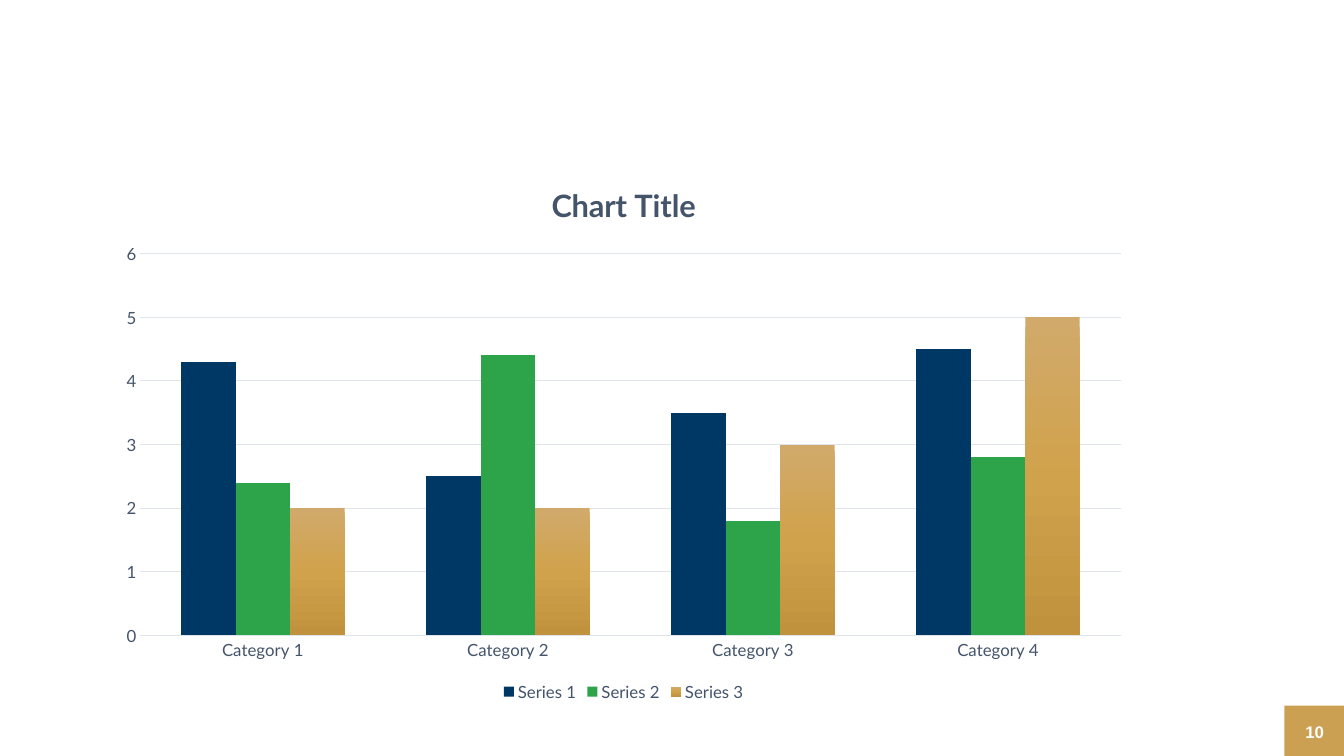
from copy import deepcopy

from pptx import Presentation
from pptx.chart.data import CategoryChartData
from pptx.dml.color import RGBColor
from pptx.enum.chart import XL_CHART_TYPE, XL_LEGEND_POSITION, XL_TICK_MARK
from pptx.enum.shapes import MSO_SHAPE
from pptx.enum.text import MSO_ANCHOR, PP_ALIGN
from pptx.util import Inches, Pt

# Content
TITLE = "Chart Title"
PAGE = "10"
CATEGORIES = ["Category 1", "Category 2", "Category 3", "Category 4"]
SERIES = [
    ("Series 1", (4.3, 2.5, 3.5, 4.5), ["navy"]),
    ("Series 2", (2.4, 4.4, 1.8, 2.8), ["green"]),
    ("Series 3", (2, 2, 3, 5), ["gold_light", "gold_mid", "gold_dark"]),
]
COLORS = {
    "navy": "003865", "green": "2DA44A", "gold_light": "D1AA6B",
    "gold_mid": "D1A24C", "gold_dark": "C1923D", "tab": "CBA052",
    "text": "44546A", "grid": "E0E5EB", "white": "FFFFFF",
}
WIDTH, HEIGHT = 13.33, 7.5
CHART_BOX = (1.05, 1.6, 10.27, 5.4)
TAB_BOX = (12.74, 7, 0.6, 0.52)


def rgb(name):
    return RGBColor.from_string(COLORS[name])


def set_font(font, size, color, name="Lato", bold=False):
    font.name, font.size, font.bold = name, Pt(size), bold
    font.color.rgb = rgb(color)


def set_line(line):
    line.color.rgb = rgb("grid")
    line.width = Pt(0.75)


def fill_series(series, names):
    fill = series.format.fill
    if len(names) == 1:
        fill.solid()
        fill.fore_color.rgb = rgb(names[0])
        return
    fill.gradient()
    fill.gradient_angle = 270
    stops = series._element.xpath(".//a:gsLst")[0]
    while len(stops) < len(names):
        stops.append(deepcopy(stops[0]))
    for i, (stop, name) in enumerate(zip(fill.gradient_stops, names)):
        stop.position = i / (len(names) - 1)
        stop.color.rgb = rgb(name)


prs = Presentation()
prs.slide_width, prs.slide_height = Inches(WIDTH), Inches(HEIGHT)
s = prs.slides.add_slide(prs.slide_layouts[6])

# Page number tab
tab = s.shapes.add_shape(MSO_SHAPE.RECTANGLE, *map(Inches, TAB_BOX))
tab.shadow.inherit = False
tab.fill.solid()
tab.fill.fore_color.rgb = rgb("tab")
tab.line.fill.background()
tf = tab.text_frame
tf.vertical_anchor = MSO_ANCHOR.MIDDLE
p = tf.paragraphs[0]
p.text = PAGE
p.alignment = PP_ALIGN.CENTER
set_font(p.font, 12, "white", "Arial", True)

# Column chart
data = CategoryChartData()
data.categories = CATEGORIES
for name, values, _ in SERIES:
    data.add_series(name, values)
chart = s.shapes.add_chart(
    XL_CHART_TYPE.COLUMN_CLUSTERED, *map(Inches, CHART_BOX), data).chart
set_font(chart.font, 12, "text")

plot = chart.plots[0]
plot.gap_width, plot.overlap = 150, 0
plot.vary_by_categories = False
for series, (_, _, names) in zip(plot.series, SERIES):
    fill_series(series, names)

# Title and legend
chart.has_title = True
p = chart.chart_title.text_frame.paragraphs[0]
p.text = TITLE
set_font(p.font, 22, "text", bold=True)
chart.chart_title.include_in_layout = False
chart.has_legend = True
chart.legend.position = XL_LEGEND_POSITION.BOTTOM
chart.legend.include_in_layout = False
set_font(chart.legend.font, 12, "text")

# Axes
for axis in (chart.category_axis, chart.value_axis):
    axis.major_tick_mark = axis.minor_tick_mark = XL_TICK_MARK.NONE
    set_font(axis.tick_labels.font, 12, "text")
set_line(chart.category_axis.format.line)
value_axis = chart.value_axis
value_axis.minimum_scale, value_axis.maximum_scale = 0, 6
value_axis.major_unit = 1
value_axis.format.line.fill.background()
value_axis.has_major_gridlines = True
set_line(value_axis.major_gridlines.format.line)

prs.save("out.pptx")
